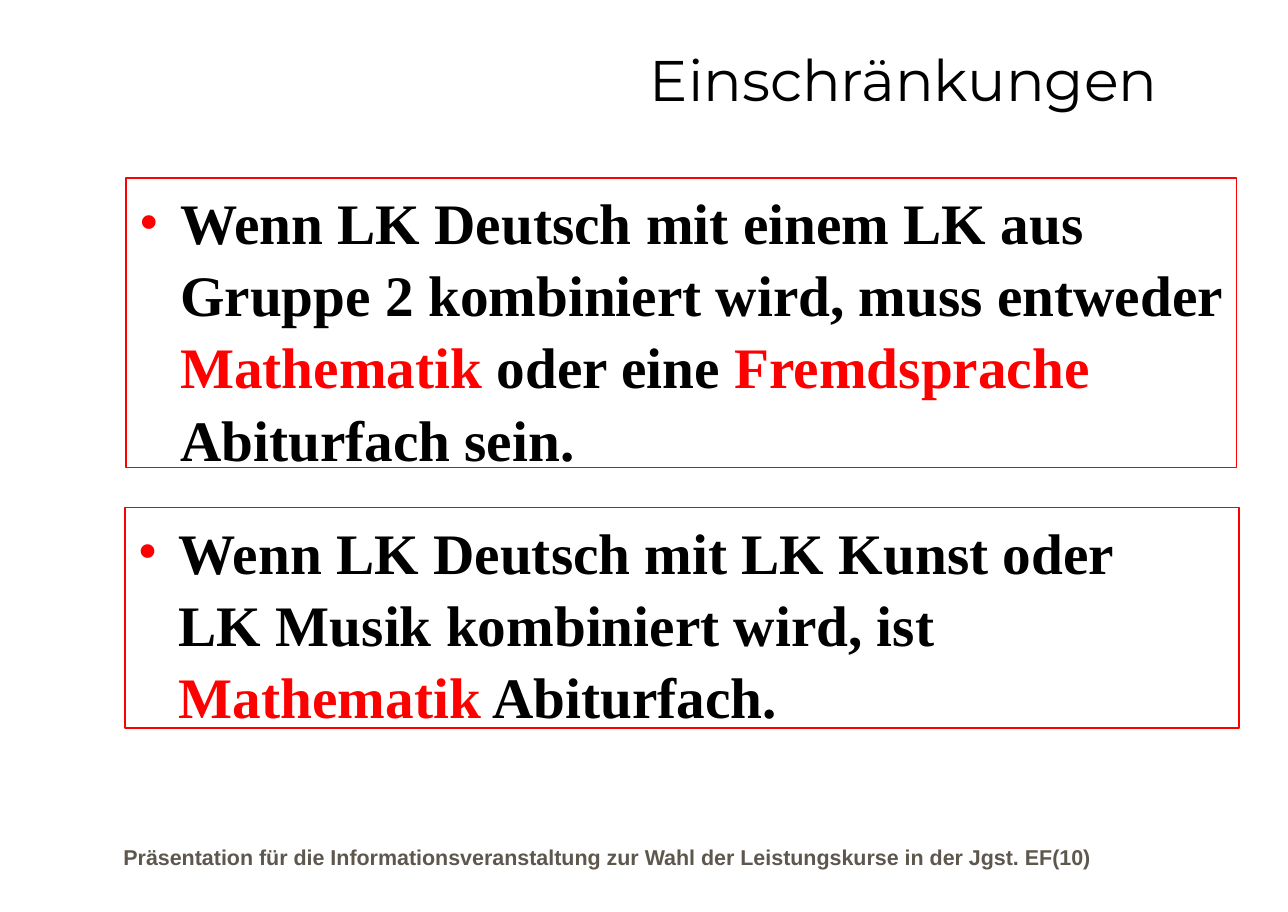
import dataclasses

import pptx
import pptx.dml.color
import pptx.enum.shapes
import pptx.enum.text
import pptx.oxml.ns
import pptx.util
from lxml import etree

EMU_PER_PX = 9144


def px(n):
    return pptx.util.Emu(n * EMU_PER_PX)


def rgb(value):
    return pptx.dml.color.RGBColor.from_string(value)


@dataclasses.dataclass(frozen=True)
class Theme:
    ink: str = "000000"
    accent: str = "FF0000"
    muted: str = "5E574E"
    title_font: str = "Montserrat"
    body_font: str = "Times New Roman"
    footer_font: str = "Arial"
    large: int = 32
    small: int = 12
    line_spacing: float = 1.05


class SlideBuilder:
    def __init__(self, slide, theme):
        self.s = slide
        self.theme = theme

    def style(self, r, font, size, color, bold):
        r.font.name = font
        r.font.size = pptx.util.Pt(size)
        r.font.bold = bold
        r.font.color.rgb = rgb(color)

    def label(self, text, box, font, size, color, bold=False,
              align=pptx.enum.text.PP_ALIGN.LEFT,
              anchor=pptx.enum.text.MSO_ANCHOR.TOP):
        sp = self.s.shapes.add_textbox(*map(px, box))
        tf = sp.text_frame
        tf.word_wrap = True
        tf.vertical_anchor = anchor
        tf.text = text
        p = tf.paragraphs[0]
        p.alignment = align
        p.line_spacing = self.theme.line_spacing
        self.style(p.runs[0], font, size, color, bold)

    def bullet(self, p, indent):
        pPr = p._p.get_or_add_pPr()
        pPr.set("marL", str(px(indent)))
        pPr.set("indent", str(px(-indent)))
        qn = pptx.oxml.ns.qn
        clr = etree.SubElement(pPr, qn("a:buClr"))
        etree.SubElement(clr, qn("a:srgbClr"), val=self.theme.accent)
        etree.SubElement(pPr, qn("a:buFont"), typeface=self.theme.body_font)
        etree.SubElement(pPr, qn("a:buChar"), char="•")

    def rule_box(self, parts, box):
        t = self.theme
        sp = self.s.shapes.add_shape(
            pptx.enum.shapes.MSO_SHAPE.RECTANGLE, *map(px, box))
        sp.shadow.inherit = False
        sp.fill.background()
        sp.line.color.rgb = rgb(t.accent)
        sp.line.width = pptx.util.Pt(1)
        tf = sp.text_frame
        tf.word_wrap = True
        tf.auto_size = pptx.enum.text.MSO_AUTO_SIZE.SHAPE_TO_FIT_TEXT
        tf.vertical_anchor = pptx.enum.text.MSO_ANCHOR.TOP
        p = tf.paragraphs[0]
        self.bullet(p, 32)
        p.alignment = pptx.enum.text.PP_ALIGN.LEFT
        p.line_spacing = t.line_spacing
        p.text = parts[0]
        for part in parts[1:]:
            p.add_run().text = part
        emphasized = parts[1::2]
        for r in p.runs:
            color = t.accent if r.text in emphasized else t.ink
            self.style(r, t.body_font, t.large, color, True)


def main():
    prs = pptx.Presentation()
    prs.slide_width, prs.slide_height = px(1000), px(708)
    theme = Theme()
    b = SlideBuilder(prs.slides.add_slide(prs.slide_layouts[6]), theme)

    b.label("Präsentation für die Informationsveranstaltung zur Wahl der "
            "Leistungskurse in der Jgst. EF(10)",
            (86, 649, 874, 31), theme.footer_font, theme.small, theme.muted,
            bold=True, anchor=pptx.enum.text.MSO_ANCHOR.BOTTOM)
    b.rule_box(["Wenn LK Deutsch mit einem LK aus Gruppe 2 kombiniert wird, "
                "muss entweder ", "Mathematik", " oder eine ",
                "Fremdsprache", " Abiturfach sein."], (98, 138, 862, 225))
    b.label("Einschränkungen", (83, 27, 826, 72), theme.title_font,
            theme.large, theme.ink, align=pptx.enum.text.PP_ALIGN.RIGHT)
    b.rule_box(["Wenn LK Deutsch mit LK Kunst oder\vLK Musik kombiniert "
                "wird, ist ", "Mathematik", " Abiturfach."],
               (97, 394, 865, 171))
    prs.save("out.pptx")


if __name__ == "__main__":
    main()
